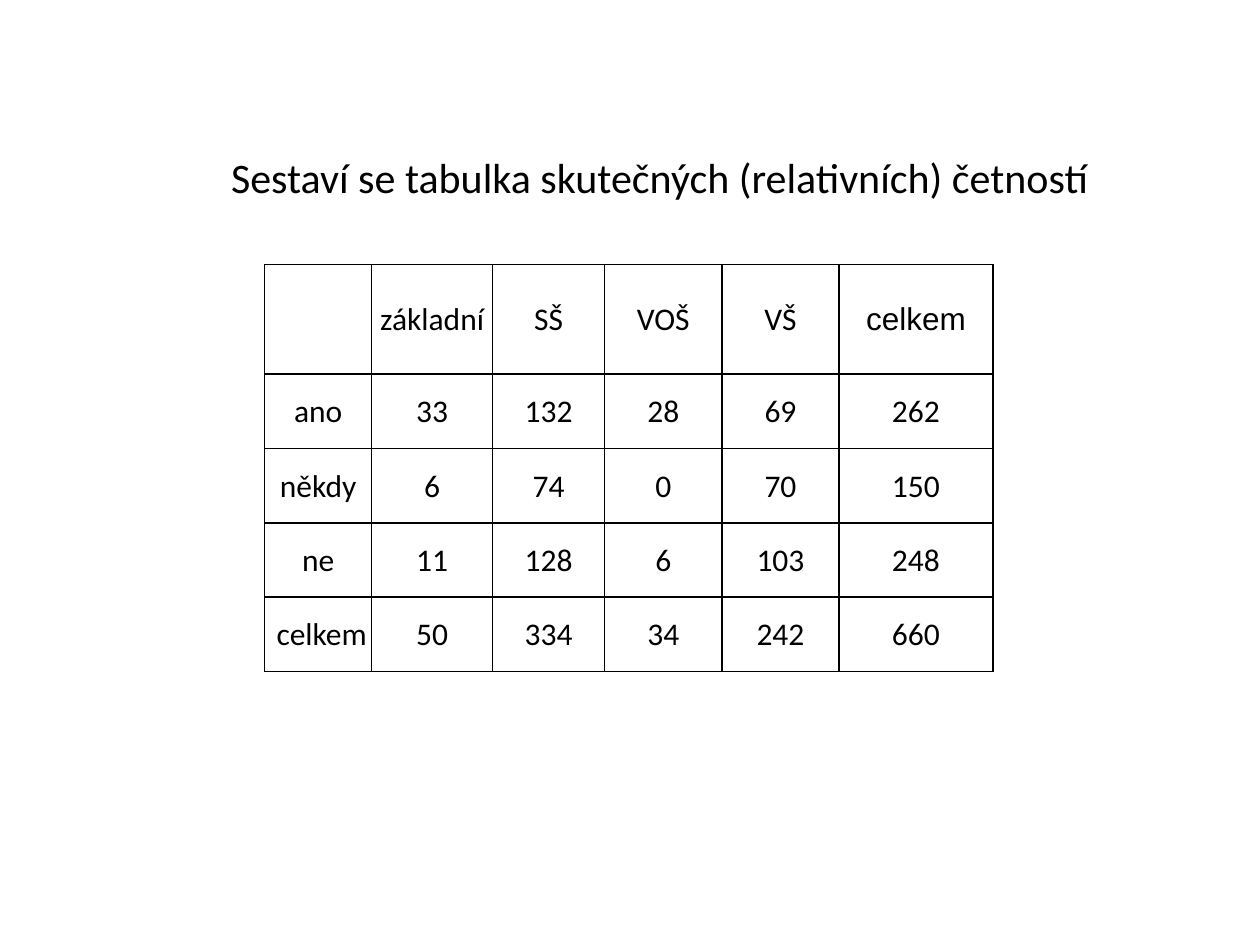
from dataclasses import dataclass

from pptx import Presentation
from pptx.dml.color import RGBColor
from pptx.enum.text import MSO_ANCHOR, MSO_AUTO_SIZE, PP_ALIGN
from pptx.oxml.ns import qn
from pptx.util import Inches, Pt
from lxml.etree import SubElement


@dataclass(frozen=True)
class Theme:
    ink: str = "000000"
    font: str = "Calibri"
    alt: str = "Arial"
    head: int = 24
    body: int = 18
    rule: int = 1
    pad: float = 0.1


class Page:
    cols, rows = 100, 75

    def __init__(self, deck, theme):
        self.theme = theme
        self.wide = deck.slide_width
        self.high = deck.slide_height
        self.slide = deck.slides.add_slide(deck.slide_layouts[5])

    def across(self, n):
        return round(self.wide * n / self.cols)

    def down(self, n):
        return round(self.high * n / self.rows)

    def style(self, para, size, font):
        para.alignment = PP_ALIGN.CENTER
        for run in para.runs:
            run.font.size = Pt(size)
            run.font.name = font
            run.font.color.rgb = RGBColor.from_string(self.theme.ink)

    def title(self, text, x, y, w, h):
        box = self.slide.shapes.title
        box.left, box.top = self.across(x), self.down(y)
        box.width, box.height = self.across(w), self.down(h)
        frame = box.text_frame
        frame.text = text
        frame.word_wrap = True
        frame.auto_size = MSO_AUTO_SIZE.SHAPE_TO_FIT_TEXT
        frame.vertical_anchor = MSO_ANCHOR.TOP
        self.style(frame.paragraphs[0], self.theme.head, self.theme.font)

    def border(self, cell):
        props = cell._tc.get_or_add_tcPr()
        for i, side in enumerate(("lnL", "lnR", "lnT", "lnB")):
            line = props.makeelement(qn(f"a:{side}"), {"w": str(Pt(self.theme.rule))})
            fill = SubElement(line, qn("a:solidFill"))
            SubElement(fill, qn("a:srgbClr"), val=self.theme.ink)
            props.insert(i, line)

    def cell(self, cell, text, font):
        cell.fill.background()
        cell.vertical_anchor = MSO_ANCHOR.MIDDLE
        cell.margin_left = cell.margin_right = self.across(self.theme.pad)
        cell.margin_top, cell.margin_bottom = self.down(self.theme.pad), 0
        cell.text = text
        self.style(cell.text_frame.paragraphs[0], self.theme.body, font)
        self.border(cell)

    def table(self, data, x, y, widths, heights, fonts):
        frame = self.slide.shapes.add_table(
            len(data), len(widths), self.across(x), self.down(y),
            self.across(sum(widths)), self.down(sum(heights)))
        grid = frame.table
        grid.first_row = grid.horz_banding = False
        for col, w in zip(grid.columns, widths):
            col.width = self.across(w)
        for row, h in zip(grid.rows, heights):
            row.height = self.down(h)
        for r, line in enumerate(data):
            for c, text in enumerate(line):
                font = fonts.get((r, c), self.theme.font)
                self.cell(grid.cell(r, c), str(text), font)


def main():
    deck = Presentation()
    deck.slide_width, deck.slide_height = Inches(10), Inches(7.5)
    theme = Theme()
    page = Page(deck, theme)
    data = [
        ("", "základní", "SŠ", "VOŠ", "VŠ", "celkem"),
        ("ano", 33, 132, 28, 69, 262),
        ("někdy", 6, 74, 0, 70, 150),
        ("ne", 11, 128, 6, 103, 248),
        (" celkem", 50, 334, 34, 242, 660),
    ]
    page.table(data, 21, 21, [8.5, 9.6, 8.9, 9.3, 9.3, 12.2],
               [8.7] + [5.9] * 4, {(0, 5): theme.alt})
    page.title("Sestaví se tabulka skutečných (relativních) četností",
               4.7, 11.5, 95.3, 5)
    deck.save("out.pptx")


if __name__ == "__main__":
    main()
